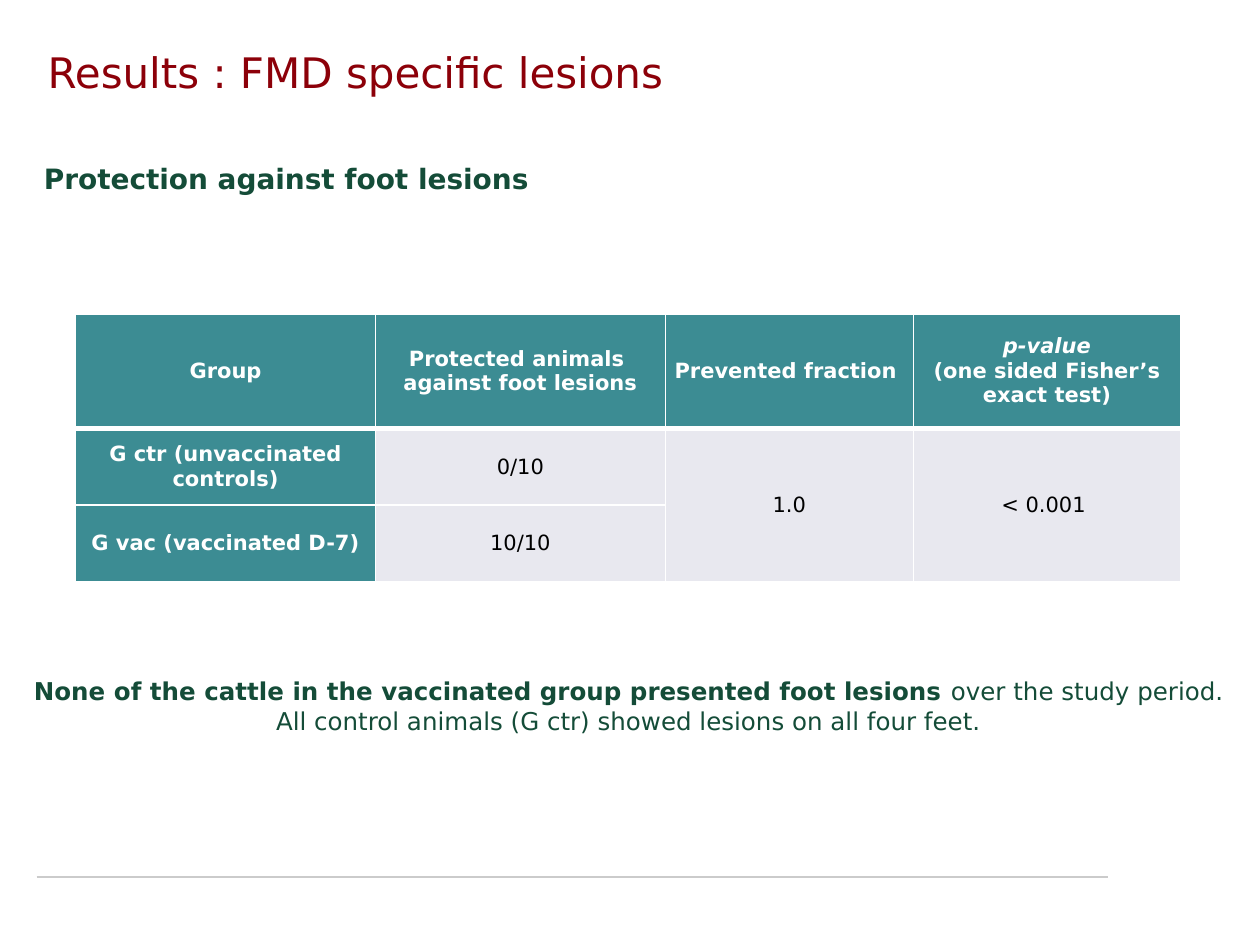
"""Build the slide on protection against foot lesions."""
from dataclasses import dataclass

from lxml import etree
from pptx import Presentation
from pptx import util as u
from pptx.dml.color import RGBColor
from pptx.enum import shapes, text
from pptx.oxml import ns

FONT = "DejaVu Sans"
RED, GREEN, TEAL = "8C0009", "144C38", "3C8C93"
PALE, WHITE, BLACK, GREY = "E8E8EF", "FFFFFF", "000000", "CBCBCB"
COLUMN_WIDTHS = (2.38, 2.3, 1.97, 2.12)
ROW_HEIGHTS = (0.91, 0.61, 0.61)


@dataclass
class TableCell:
    row: int
    column: int
    lines: tuple[str, ...]
    row_span: int = 1
    italic_first: bool = False

    @property
    def is_heading(self) -> bool:
        return self.row == 0 or self.column == 0


CELLS = (
    TableCell(0, 0, ("Group",)),
    TableCell(0, 1, ("Protected animals ", "against foot lesions")),
    TableCell(0, 2, ("Prevented fraction ",)),
    TableCell(0, 3, ("p-value", "(one sided Fisher’s exact test)"), italic_first=True),
    TableCell(1, 0, ("G ctr (unvaccinated controls)",)),
    TableCell(1, 1, ("0/10",)),
    TableCell(1, 2, ("1.0",), row_span=2),
    TableCell(1, 3, ("< 0.001 ",), row_span=2),
    TableCell(2, 0, ("G vac (vaccinated D-7)",)),
    TableCell(2, 1, ("10/10",)),
)


def color(value: str) -> RGBColor:
    return RGBColor.from_string(value)


def add_text(para, content: str, *, size: float, fill: str, bold=False, italic=False, align=None) -> None:
    span = para.add_run()
    span.text = content
    span.font.name, span.font.size = FONT, u.Pt(size)
    span.font.bold, span.font.italic = bold, italic
    span.font.color.rgb = color(fill)
    if align is not None:
        para.alignment = align


def add_box(page, left: float, top: float, width: float, height: float, wrap=False):
    box = page.shapes.add_textbox(*map(u.Inches, (left, top, width, height)))
    box.text_frame.word_wrap = wrap
    return box.text_frame


def add_rule(page, left: float, right: float, top: float) -> None:
    rule = page.shapes.add_connector(
        shapes.MSO_CONNECTOR.STRAIGHT, *map(u.Inches, (left, top, right, top)))
    rule.line.color.rgb, rule.line.width = color(GREY), u.Pt(1)
    etree.SubElement(rule._element.spPr, ns.qn("a:effectLst"))


def add_borders(cell, bottom: float) -> None:
    properties = cell._tc.get_or_add_tcPr()
    for side, width in (("L", 1), ("R", 1), ("T", 1), ("B", bottom)):
        border = etree.SubElement(properties, ns.qn(f"a:ln{side}"), w=str(u.Pt(width)))
        fill = etree.SubElement(border, ns.qn("a:solidFill"))
        etree.SubElement(fill, ns.qn("a:srgbClr"), val=WHITE)


def fill_cell(table, entry: TableCell) -> None:
    cell = table.cell(entry.row, entry.column)
    if entry.row_span > 1:
        cell.merge(table.cell(entry.row + entry.row_span - 1, entry.column))
    cell.vertical_anchor = text.MSO_ANCHOR.MIDDLE
    cell.margin_left = cell.margin_right = u.Inches(0.07)
    cell.margin_top = cell.margin_bottom = 0
    heading = entry.is_heading
    for index, line in enumerate(entry.lines):
        frame = cell.text_frame
        para = frame.add_paragraph() if index else frame.paragraphs[0]
        add_text(para, line, size=12, fill=WHITE if heading else BLACK, bold=heading,
                 italic=entry.italic_first and index == 0, align=text.PP_ALIGN.CENTER)


def add_results_table(page) -> None:
    frame = page.shapes.add_table(
        len(ROW_HEIGHTS), len(COLUMN_WIDTHS), u.Inches(0.6), u.Inches(2.49),
        u.Inches(sum(COLUMN_WIDTHS)), u.Inches(sum(ROW_HEIGHTS)))
    table = frame.table
    for column, width in zip(table.columns, COLUMN_WIDTHS):
        column.width = u.Inches(width)
    for row_index, (row, height) in enumerate(zip(table.rows, ROW_HEIGHTS)):
        row.height = u.Inches(height)
        for column_index, cell in enumerate(row.cells):
            add_borders(cell, bottom=1 if row_index else 3)
            cell.fill.solid()
            cell.fill.fore_color.rgb = color(PALE if row_index and column_index else TEAL)
    for entry in CELLS:
        fill_cell(table, entry)


def main() -> None:
    deck = Presentation()
    deck.slide_width, deck.slide_height = u.Inches(10), u.Inches(7.5)
    page = deck.slides.add_slide(deck.slide_layouts[6])
    add_rule(page, 0.29, 8.79, 6.96)

    title = add_box(page, 0.28, 0.07, 8.5, 1, wrap=True)
    title.vertical_anchor = text.MSO_ANCHOR.MIDDLE
    add_text(title.paragraphs[0], "Results : FMD specific lesions", size=24, fill=RED)

    subtitle = add_box(page, 0.25, 1.23, 4.06, 0.37)
    add_text(subtitle.paragraphs[0], "Protection against foot lesions", size=16, fill=GREEN, bold=True)

    add_results_table(page)

    summary = add_box(page, 0.15, 5.32, 9.68, 0.57)
    style = {"size": 14, "fill": GREEN, "align": text.PP_ALIGN.CENTER}
    finding = summary.paragraphs[0]
    add_text(finding, "None of the cattle in the vaccinated group presented foot lesions ", bold=True, **style)
    add_text(finding, "over the study period. ", **style)
    add_text(summary.add_paragraph(), "All control animals (G ctr) showed lesions on all four feet.", **style)

    deck.save("out.pptx")


if __name__ == "__main__":
    main()
